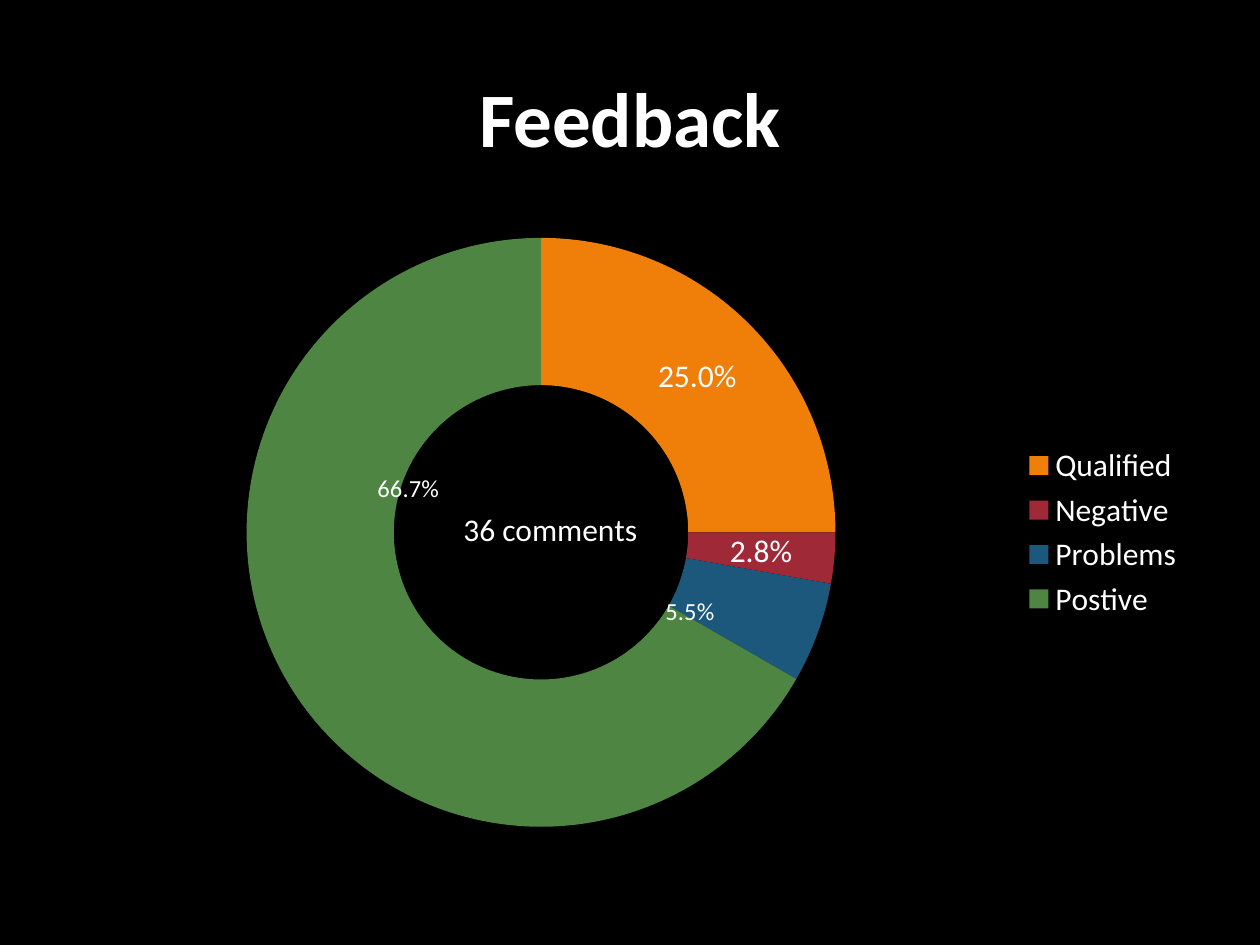
from dataclasses import dataclass

from lxml import etree
from pptx import Presentation
from pptx import util as u
from pptx.chart import data
from pptx.dml.color import RGBColor
from pptx.enum import chart as charts, text
from pptx.oxml import ns

FONT = "Calibri"
WHITE = "FFFFFF"


@dataclass
class Slice:
    name: str
    share: float
    color: str


@dataclass
class MovedLabel:
    """Label with its own wording, shifted by a fraction of the chart size."""
    index: int
    wording: str
    shift_x: float
    shift_y: float


@dataclass
class Caption:
    wording: str
    box: tuple[float, float, float, float]
    size: int
    bold: bool
    wrap: bool
    alignment: text.PP_ALIGN
    anchor: text.MSO_ANCHOR


SLICES = [
    Slice("Qualified", 0.25, "F07F09"),
    Slice("Negative", 0.028, "9F2936"),
    Slice("Problems", 0.055, "1B587C"),
    Slice("Postive", 0.667, "4E8542"),
]
MOVED_LABELS = [
    MovedLabel(2, "66.7%", -0.3, -0.19),
    MovedLabel(3, "5.5%", 0.3, -0.05),
]
TITLE = Caption("Feedback", (0.5, 0.3, 9, 1.25), 44, True, True,
                text.PP_ALIGN.CENTER, text.MSO_ANCHOR.MIDDLE)
TOTAL = Caption("36 comments", (3.58, 4, 1.6, 0.4), 18, False, False,
                text.PP_ALIGN.LEFT, text.MSO_ANCHOR.TOP)


def color(value: str) -> RGBColor:
    return RGBColor.from_string(value)


def paint(fill, value: str) -> None:
    fill.solid()
    fill.fore_color.rgb = color(value)


def format_font(font, size: int, bold: bool = False) -> None:
    values = {"name": FONT, "size": u.Pt(size), "bold": bold}
    for name, value in values.items():
        setattr(font, name, value)
    font.color.rgb = color(WHITE)


def add_caption(slide, caption: Caption) -> None:
    shape = slide.shapes.add_textbox(*map(u.Inches, caption.box))
    frame = shape.text_frame
    frame.word_wrap = caption.wrap
    frame.vertical_anchor = caption.anchor
    paragraph = frame.paragraphs[0]
    paragraph.alignment = caption.alignment
    run = paragraph.add_run()
    run.text = caption.wording
    format_font(run.font, caption.size, caption.bold)


def move_label(series, label: MovedLabel) -> None:
    data_label = series.points[label.index].data_label
    run = data_label.text_frame.paragraphs[0].add_run()
    run.text = label.wording
    format_font(run.font, 14)

    # The public API has no manual label position.
    elements = series.data_labels._element
    element = next(item for item in elements.findall(ns.qn("c:dLbl"))
                   if item.find(ns.qn("c:idx")).get("val") == str(label.index))
    layout = etree.Element(ns.qn("c:layout"))
    manual = etree.SubElement(layout, ns.qn("c:manualLayout"))
    for axis, shift in (("x", label.shift_x), ("y", label.shift_y)):
        etree.SubElement(manual, ns.qn(f"c:{axis}"), val=str(shift))
    element.find(ns.qn("c:idx")).addnext(layout)


def add_feedback_chart(slide) -> None:
    chart_data = data.CategoryChartData(number_format="0.0%")
    chart_data.categories = [item.name for item in SLICES]
    chart_data.add_series("Series 1", [item.share for item in SLICES])
    box = map(u.Inches, (0.5, 1.75, 9, 4.95))
    chart = slide.shapes.add_chart(
        charts.XL_CHART_TYPE.DOUGHNUT, *box, chart_data).chart
    chart.has_title = False
    format_font(chart.font, 18)
    chart.has_legend = True
    chart.legend.position = charts.XL_LEGEND_POSITION.RIGHT
    chart.legend.include_in_layout = False
    chart.plots[0].vary_by_categories = True

    series = chart.plots[0].series[0]
    for index, item in enumerate(SLICES):
        point_format = series.points[index].format
        paint(point_format.fill, item.color)
        point_format.line.fill.background()

    label_format = {
        "show_value": True,
        "show_percentage": False,
        "number_format": "0.0%",
        "number_format_is_linked": False,
    }
    for name, value in label_format.items():
        setattr(series.data_labels, name, value)
    format_font(series.data_labels.font, 18)
    for label in MOVED_LABELS:
        move_label(series, label)


def main() -> None:
    presentation = Presentation()
    presentation.slide_width = u.Inches(10)
    presentation.slide_height = u.Inches(7.5)
    slide = presentation.slides.add_slide(presentation.slide_layouts[6])
    paint(slide.background.fill, "000000")
    add_caption(slide, TITLE)
    add_feedback_chart(slide)
    add_caption(slide, TOTAL)
    presentation.save("out.pptx")


if __name__ == "__main__":
    main()
